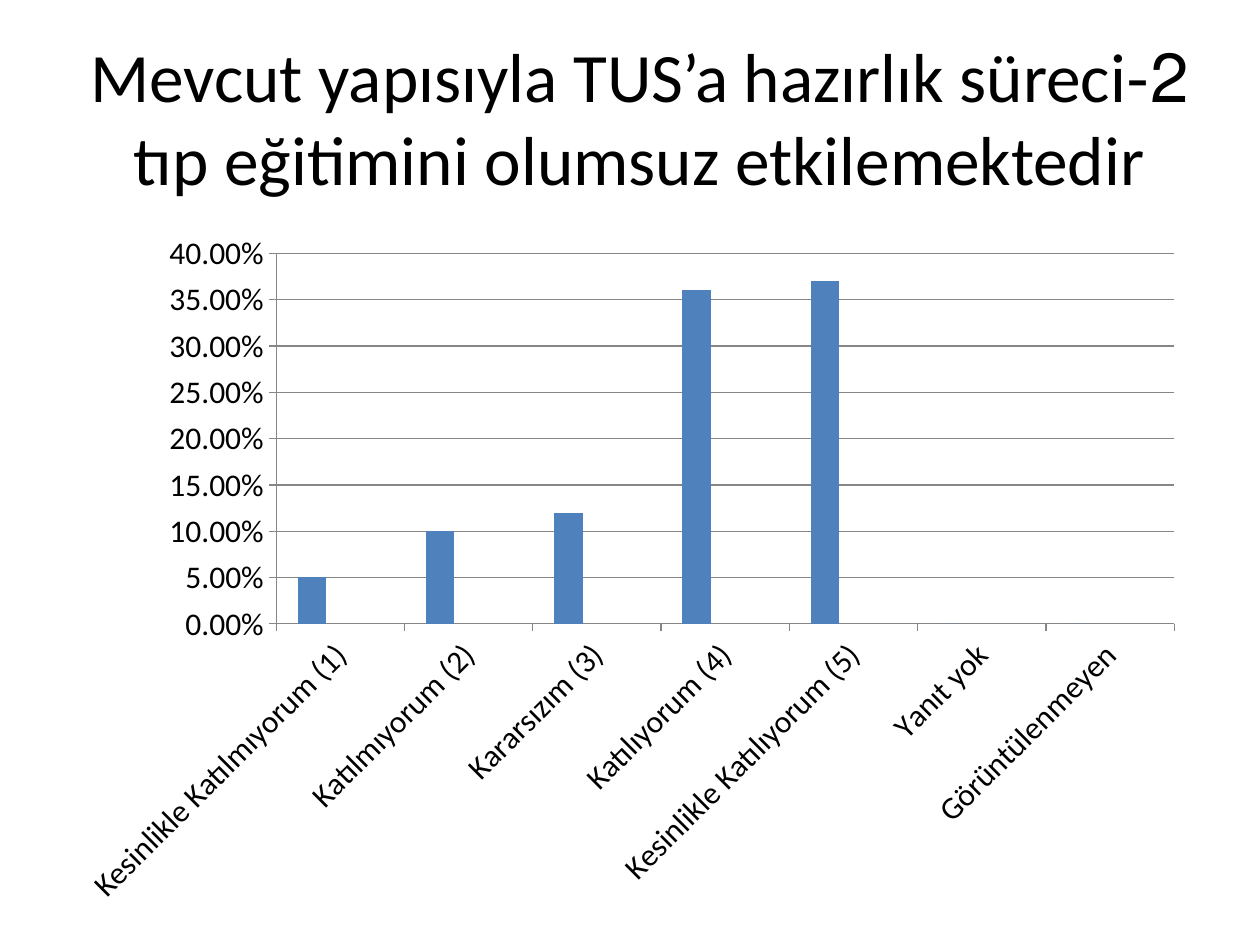
from pptx import Presentation
from pptx.chart.data import CategoryChartData
from pptx.dml.color import RGBColor
from pptx.enum.chart import XL_CHART_TYPE as ChartType, XL_TICK_MARK as Tick
from pptx.enum.text import MSO_ANCHOR as Anchor, PP_ALIGN as Align
from pptx.util import Pt

FONT = "Calibri"
COLORS = {
    "text": "000000",
    "axis": "868686",
    "Series 1": "4F81BD",
    "Series 2": "C0504D",
    "Series 3": "9BBB59",
}
TITLE = "2-Mevcut yapısıyla TUS’a hazırlık süreci tıp eğitimini olumsuz etkilemektedir"
ANSWERS = {
    "Kesinlikle Katılmıyorum (1)": 0.05,
    "Katılmıyorum (2)": 0.1,
    "Kararsızım (3)": 0.12,
    "Katılıyorum (4)": 0.36,
    "Kesinlikle Katılıyorum (5)": 0.37,
    "Yanıt yok": 0,
    "Görüntülenmeyen": 0,
}


def color(name):
    return RGBColor.from_string(COLORS[name])


def style_font(font, size):
    font.name = FONT
    font.size = Pt(size)
    font.color.rgb = color("text")


def place_title(page, box):
    title = page.shapes.title
    title.left, title.top, title.width, title.height = map(Pt, box)
    frame = title.text_frame
    frame.word_wrap = True
    frame.vertical_anchor = Anchor.MIDDLE
    para = frame.paragraphs[0]
    para.alignment = Align.CENTER
    para._p.get_or_add_pPr().set("rtl", "1")
    span = para.add_run()
    span.text = TITLE
    style_font(span.font, 39.6)


def style_axis(axis):
    axis.major_tick_mark = Tick.OUTSIDE
    axis.minor_tick_mark = Tick.NONE
    axis.format.line.color.rgb = color("axis")
    style_font(axis.tick_labels.font, 18)


def place_answer_chart(page, box):
    data = CategoryChartData(number_format="0.00%")
    data.categories = list(ANSWERS)
    data.add_series("Series 1", list(ANSWERS.values()))
    for name in ("Series 2", "Series 3"):
        data.add_series(name, [None] * len(ANSWERS))
    chart = page.shapes.add_chart(
        ChartType.COLUMN_CLUSTERED, *map(Pt, box), data).chart
    chart.has_legend = False
    chart.has_title = False
    style_font(chart.font, 18)

    plot = chart.plots[0]
    plot.gap_width = 150
    plot.vary_by_categories = False
    for series in plot.series:
        series.format.fill.solid()
        series.format.fill.fore_color.rgb = color(series.name)

    style_axis(chart.category_axis)
    values = chart.value_axis
    style_axis(values)
    values.has_major_gridlines = True
    values.major_gridlines.format.line.color.rgb = color("axis")
    values.tick_labels.number_format = "0.00%"
    values.tick_labels.number_format_is_linked = False


def main():
    deck = Presentation()
    deck.slide_width, deck.slide_height = Pt(720), Pt(540)
    page = deck.slides.add_slide(deck.slide_layouts[5])
    place_title(page, (36, 21.6, 658.8, 89.3))
    place_answer_chart(page, (36, 126, 648, 398.9))
    deck.save("out.pptx")


if __name__ == "__main__":
    main()
